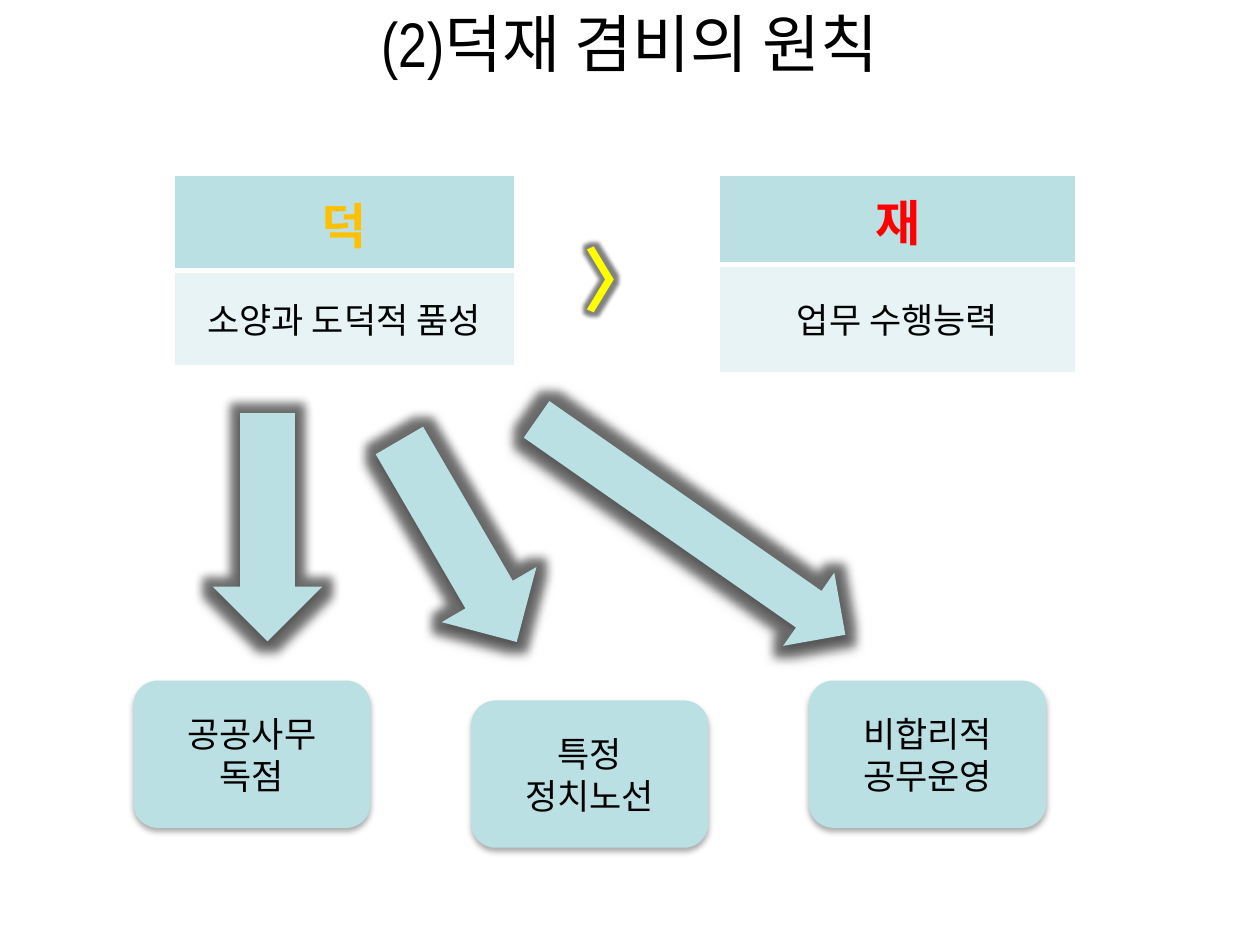
"""Build the slide on the principle of joining virtue and talent."""
from lxml import etree
from pptx import Presentation
from pptx.dml.color import RGBColor
from pptx.enum import shapes, text
from pptx.oxml import parse_xml
from pptx.oxml.ns import nsdecls, qn
from pptx.util import Cm, Pt

KOREAN = "Noto Sans CJK KR"
TEAL, PALE, WHITE, BLACK = "BBE0E3", "E7F3F4", "FFFFFF", "000000"
color = RGBColor.from_string
GLOW = '<a:glow rad="139700"><a:srgbClr val="000000"><a:alpha val="50000"/></a:srgbClr></a:glow>'
SHADOW = ('<a:outerShdw blurRad="44450" dist="27940" dir="5400000" algn="ctr" rotWithShape="0">'
          '<a:srgbClr val="000000"><a:alpha val="32000"/></a:srgbClr></a:outerShdw>')


def effects(*items):
    return parse_xml(f'<a:effectLst {nsdecls("a")}>{"".join(items)}</a:effectLst>')


def write(frame, words, size, ink, bold=False, latin=KOREAN, align=text.PP_ALIGN.CENTER):
    frame.text = words
    frame.vertical_anchor = text.MSO_ANCHOR.MIDDLE
    paragraph = frame.paragraphs[0]
    paragraph.alignment = align
    run = paragraph.runs[0]
    run.font.size = Pt(size)
    run.font.bold = bold
    run.font.color.rgb = color(ink)
    run.font.name = latin
    latin_tag = run.font._element.find(qn("a:latin"))
    east_asian = etree.Element(qn("a:ea"), typeface=KOREAN)
    latin_tag.addnext(east_asian)
    return run


deck = Presentation()
deck.slide_width, deck.slide_height = Cm(25.4), Cm(19.05)
slide = deck.slides.add_slide(deck.slide_layouts[6])

title = slide.shapes.add_textbox(0, 0, Cm(25.4), Cm(1.7)).text_frame
title.word_wrap = True
write(title, "(2)덕재 겸비의 원칙", 36, BLACK, latin="Arial Narrow")

for left, width, heights, quality, ink, meaning in (
    (3.51, 6.86, (1.92, 1.92), "덕", "FFC000", "소양과 도덕적 품성"),
    (14.5, 7.19, (1.8, 2.18), "재", "FF0000", "업무 수행능력"),
):
    table = slide.shapes.add_table(2, 1, Cm(left), Cm(3.53), Cm(width), Cm(sum(heights))).table
    rows = ((quality, 28, ink, True, TEAL), (meaning, 20, BLACK, False, PALE))
    for index, (words, size, letter, bold, fill) in enumerate(rows):
        table.rows[index].height = Cm(heights[index])
        cell = table.cell(index, 0)
        write(cell.text_frame, words, size, letter, bold)
        cell.vertical_anchor = text.MSO_ANCHOR.MIDDLE
        middle_edge = "B" if index == 0 else "T"
        for edge in "LRTB":
            line_width = Pt(3 if edge == middle_edge else 1)
            cell._tc.get_or_add_tcPr().append(parse_xml(
                f'<a:ln{edge} {nsdecls("a")} w="{line_width}"><a:solidFill>'
                f'<a:srgbClr val="{WHITE}"/></a:solidFill></a:ln{edge}>'))
        cell.fill.solid()
        cell.fill.fore_color.rgb = color(fill)

greater = slide.shapes.add_textbox(Cm(11.51), Cm(4.11), Cm(2.97), Cm(3)).text_frame
greater.word_wrap = False
greater_run = write(greater, "〉", 40, "FFFF00", True, align=text.PP_ALIGN.LEFT)
greater_fill = greater_run.font._element.find(qn("a:solidFill"))
greater_fill.addprevious(parse_xml(
    f'<a:ln {nsdecls("a")} w="{Pt(0.15)}"><a:solidFill>'
    f'<a:srgbClr val="{BLACK}"/></a:solidFill></a:ln>'))
greater_fill.addnext(effects(GLOW))

PROCESS = shapes.MSO_SHAPE.FLOWCHART_ALTERNATE_PROCESS
ARROW = shapes.MSO_SHAPE.DOWN_ARROW
for kind, left, top, width, height, turn, words in (
    (PROCESS, 2.69, 13.72, 4.78, 2.97, 0, "공공사무 독점"),
    (PROCESS, 9.5, 14.12, 4.78, 2.97, 0, "특정 정치노선"),
    (PROCESS, 16.31, 13.72, 4.78, 2.97, 0, "비합리적 공무운영"),
    (ARROW, 4.29, 8.33, 2.21, 4.6, 0, ""),
    (ARROW, 8.13, 8.56, 2.21, 4.7, 329.8, ""),
    (ARROW, 13.03, 6.83, 1.8, 7.59, 304.9, ""),
):
    shape = slide.shapes.add_shape(kind, Cm(left), Cm(top), Cm(width), Cm(height))
    shape.rotation = turn
    shape.fill.solid()
    shape.fill.fore_color.rgb = color(TEAL)
    shape.line.fill.background()
    shape._element.spPr.append(effects(SHADOW) if words else effects(GLOW, SHADOW))
    if words:
        write(shape.text_frame, words, 20, BLACK)

deck.save("out.pptx")
